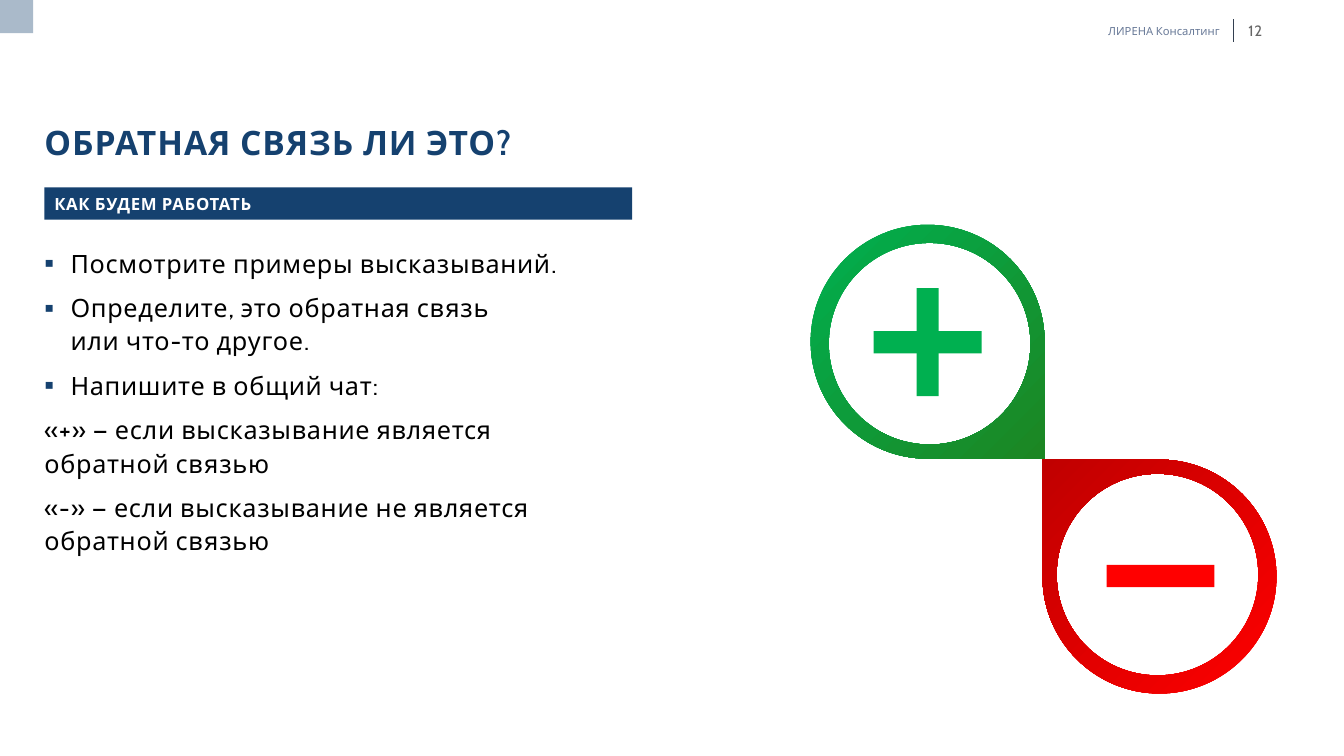
from dataclasses import dataclass

import lxml.etree
import pptx
import pptx.dml.color
import pptx.enum.shapes
import pptx.enum.text
import pptx.oxml.ns
import pptx.util

PX = 9144
BEND = 0.5523
FACE = "Cabin"
NAVY = "15416F"
GREEN = "00B050"
RED = "FF0000"
ALIGN = pptx.enum.text.PP_ALIGN
ANCHOR = pptx.enum.text.MSO_ANCHOR
AXES = [(0, 1), (-1, 0), (0, -1), (1, 0)]


@dataclass
class Box:
    left: int
    top: int
    width: int
    height: int


@dataclass
class Style:
    size: float
    hue: str
    gap: int = 0
    bold: bool = False


@dataclass
class Item:
    lines: list[str]
    dot: bool = False


@dataclass
class Drop:
    left: int
    top: int
    turn: int
    hues: tuple[str, str]


@dataclass
class Bar:
    mid_x: int
    mid_y: int
    turn: int
    hue: str


def emu(px: float) -> int:
    return pptx.util.Emu(round(px * PX))


def tint(code: str) -> pptx.dml.color.RGBColor:
    return pptx.dml.color.RGBColor.from_string(code)


def place(shape, box: Box) -> None:
    shape.left, shape.top = emu(box.left), emu(box.top)
    shape.width, shape.height = emu(box.width), emu(box.height)


def setup(frame, anchor, pads: tuple[int, int, int, int] = (0, 0, 0, 0)) -> None:
    frame.word_wrap = True
    frame.auto_size = pptx.enum.text.MSO_AUTO_SIZE.NONE
    frame.vertical_anchor = anchor
    left, top, right, base = map(emu, pads)
    frame.margin_left, frame.margin_top = left, top
    frame.margin_right, frame.margin_bottom = right, base


def write(para, text: str, style: Style) -> None:
    run = para.add_run()
    run.text = text
    run.font.name = FACE
    run.font.size = pptx.util.Pt(style.size)
    run.font.bold = style.bold
    run.font.color.rgb = tint(style.hue)
    if style.gap:
        run._r.get_or_add_rPr().set("spc", str(style.gap))


def label(slide, box: Box, text: str, style: Style, align) -> None:
    shape = slide.shapes.add_textbox(0, 0, 0, 0)
    place(shape, box)
    setup(shape.text_frame, ANCHOR.MIDDLE)
    para = shape.text_frame.paragraphs[0]
    para.alignment = align
    write(para, text, style)


def block(slide, box: Box, hue: str, turn: int = 0):
    kind = pptx.enum.shapes.MSO_SHAPE.RECTANGLE
    shape = slide.shapes.add_shape(kind, 0, 0, 0, 0)
    place(shape, box)
    shape.rotation = turn
    shape.shadow.inherit = False
    shape.fill.solid()
    shape.fill.fore_color.rgb = tint(hue)
    shape.line.fill.background()
    return shape


def bullet(para) -> None:
    props = para._p.get_or_add_pPr()
    props.set("marL", str(emu(26)))
    props.set("indent", str(-emu(26)))
    qn = pptx.oxml.ns.qn
    color = lxml.etree.SubElement(props, qn("a:buClr"))
    lxml.etree.SubElement(color, qn("a:srgbClr")).set("val", NAVY)
    lxml.etree.SubElement(props, qn("a:buSzPct")).set("val", "110000")
    lxml.etree.SubElement(props, qn("a:buFont")).set("typeface", "Arial")
    lxml.etree.SubElement(props, qn("a:buChar")).set("char", "▪")


def steps(slide, box: Box, items: list[Item], style: Style) -> None:
    shape = slide.shapes.add_textbox(0, 0, 0, 0)
    place(shape, box)
    frame = shape.text_frame
    setup(frame, ANCHOR.TOP, (0, 0, 10, 5))
    for rank, item in enumerate(items):
        para = frame.add_paragraph() if rank else frame.paragraphs[0]
        if item.dot:
            bullet(para)
        para.line_spacing = 1.1
        para.space_before = pptx.util.Pt(8 if rank else 0)
        for count, line in enumerate(item.lines):
            if count:
                para.add_line_break()
            write(para, line, style)


def arc(mid: tuple[int, int], size: int, axes: list[tuple[int, int]]) -> list[tuple[int, int]]:
    spots = []
    for (ax, ay), (bx, by) in zip(axes, axes[1:]):
        spots += [(ax + BEND * bx, ay + BEND * by), (bx + BEND * ax, by + BEND * ay), (bx, by)]
    return [(emu(mid[0] + size * x), emu(mid[1] + size * y)) for x, y in spots]


def curve(shape) -> None:
    qn = pptx.oxml.ns.qn
    lines = list(shape._element.iter(qn("a:lnTo")))[2:]
    for first, *rest in zip(lines[::3], lines[1::3], lines[2::3]):
        first.tag = qn("a:cubicBezTo")
        for line in rest:
            first.append(line[0])
            line.getparent().remove(line)


def ring(slide, drop: Drop) -> None:
    size, hole = 116, 100
    mid_x, mid_y = drop.left + size, drop.top + size
    right, base = emu(mid_x + size), emu(mid_y + size)
    pen = slide.shapes.build_freeform(right, emu(mid_y))
    outer = arc((mid_x, mid_y), size, AXES)
    pen.add_line_segments([(right, base), (emu(mid_x), base), *outer], close=True)
    inner = arc((mid_x + 2, mid_y + 2), hole, [AXES[0], *AXES[::-1]])
    pen.move_to(*inner[-1])
    pen.add_line_segments(inner, close=True)
    shape = pen.convert_to_shape()
    curve(shape)
    shape.rotation = drop.turn
    shape.shadow.inherit = False
    shape.line.fill.background()
    shape.fill.gradient()
    shape.fill.gradient_angle = 315
    for stop, hue in zip(shape.fill.gradient_stops, drop.hues):
        stop.color.rgb = tint(hue)


def rule(slide, x: int, top: int, base: int, hue: str) -> None:
    kind = pptx.enum.shapes.MSO_CONNECTOR.STRAIGHT
    line = slide.shapes.add_connector(kind, emu(x), emu(top), emu(x), emu(base))
    line.line.color.rgb = tint(hue)
    line.line.width = pptx.util.Pt(0.5)
    lxml.etree.SubElement(line._element.spPr, pptx.oxml.ns.qn("a:effectLst"))


ITEMS = [
    Item(["Посмотрите примеры высказываний."], True),
    Item(["Определите, это обратная связь", "или что-то другое."], True),
    Item(["Напишите в общий чат:"], True),
    Item(["«+» — если высказывание является обратной связью"]),
    Item(["«-» — если высказывание не является обратной связью"]),
]
DROPS = [Drop(804, 223, 0, (GREEN, "1C8623")), Drop(1034, 456, 180, (RED, "C00000"))]
BARS = [Bar(920, 339, 0, GREEN), Bar(920, 339, 90, GREEN), Bar(1151, 571, 90, RED)]


def main() -> None:
    deck = pptx.Presentation()
    deck.slide_width, deck.slide_height = emu(1333), emu(750)
    slide = deck.slides.add_slide(deck.slide_layouts[5])

    title = slide.shapes.title
    place(title, Box(44, 80, 583, 81))
    setup(title.text_frame, ANCHOR.BOTTOM)
    para = title.text_frame.paragraphs[0]
    para.alignment = ALIGN.LEFT
    write(para, "ОБРАТНАЯ СВЯЗЬ ЛИ ЭТО?", Style(24, NAVY, 70, True))

    rule(slide, 1223, 19, 42, "333F50")
    label(slide, Box(1073, 24, 137, 13), "ЛИРЕНА Консалтинг", Style(8, "697A98"), ALIGN.RIGHT)
    block(slide, Box(0, 0, 33, 33), "AABACA")
    label(slide, Box(1224, 24, 42, 13), "12", Style(10.7, "666666", 40), ALIGN.CENTER)

    head = block(slide, Box(44, 186, 583, 32), NAVY)
    setup(head.text_frame, ANCHOR.MIDDLE, (10, 5, 10, 5))
    para = head.text_frame.paragraphs[0]
    para.alignment = ALIGN.LEFT
    write(para, "КАК БУДЕМ РАБОТАТЬ", Style(12, "FFFFFF", 50, True))

    steps(slide, Box(44, 243, 583, 471), ITEMS, Style(18, "000000", 50))
    for drop in DROPS:
        ring(slide, drop)
    for bar in BARS:
        block(slide, Box(bar.mid_x - 11, bar.mid_y - 53, 22, 107), bar.hue, bar.turn)
    deck.save("out.pptx")


if __name__ == "__main__":
    main()
